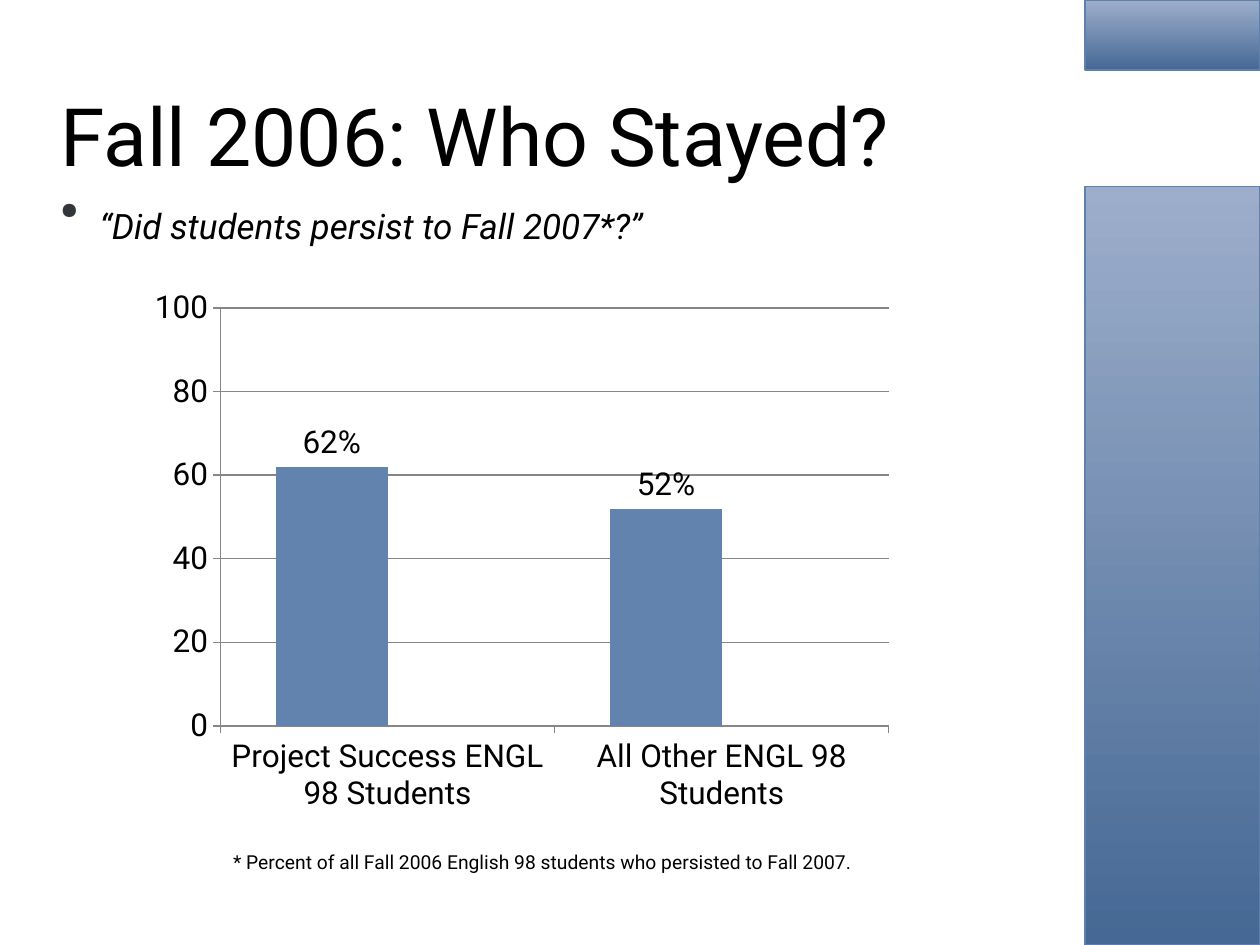
from lxml import etree
from pptx import Presentation
from pptx.chart.data import CategoryChartData
from pptx.dml.color import RGBColor
from pptx.enum import chart as charts, shapes, text
from pptx.oxml import parse_xml
from pptx.oxml.ns import nsdecls, qn
from pptx.util import Cm, Pt

FONT = "Roboto"
BLACK = "000000"
AXIS_GREY = "868686"


def color(hex_value):
    return RGBColor.from_string(hex_value)


def set_font(font, size, italic=False):
    font.name = FONT
    font.size = Pt(size)
    font.italic = italic
    font.color.rgb = color(BLACK)


def add_text(slide, content, box, size, italic=False, anchor=text.MSO_ANCHOR.TOP,
             grow=False):
    """Add a wrapped text box and return its paragraph."""
    frame = slide.shapes.add_textbox(*map(Cm, box)).text_frame
    frame.word_wrap = True
    frame.vertical_anchor = anchor
    if grow:
        frame.auto_size = text.MSO_AUTO_SIZE.SHAPE_TO_FIT_TEXT
    paragraph = frame.paragraphs[0]
    run = paragraph.add_run()
    run.text = content
    set_font(run.font, size, italic)
    return paragraph


def add_bullet(paragraph, hex_value, indent):
    props = paragraph._p.get_or_add_pPr()
    props.set("marL", str(Cm(indent)))
    props.set("indent", str(-Cm(indent)))
    bullet_color = etree.SubElement(props, qn("a:buClr"))
    etree.SubElement(bullet_color, qn("a:srgbClr")).set("val", hex_value)
    etree.SubElement(props, qn("a:buSzPct")).set("val", "65000")
    etree.SubElement(props, qn("a:buChar")).set("char", "●")


def add_side_panel(slide, top, height):
    panel = slide.shapes.add_shape(shapes.MSO_SHAPE.RECTANGLE, Cm(21.87), Cm(top),
                                   Cm(3.53), Cm(height))
    panel.shadow.inherit = False
    panel.fill.gradient()
    panel.fill.gradient_angle = 90
    for stop, hex_value, position in zip(panel.fill.gradient_stops,
                                         ("456894", "9DAECB"), (0, 1)):
        stop.color.rgb = color(hex_value)
        stop.position = position
    panel.line.color.rgb = color("5E80AB")
    panel.line.width = Pt(1)


def style_axis(axis):
    axis.major_tick_mark = charts.XL_TICK_MARK.OUTSIDE
    axis.minor_tick_mark = charts.XL_TICK_MARK.NONE
    axis.format.line.color.rgb = color(AXIS_GREY)
    set_font(axis.tick_labels.font, 18)


def set_plot_area(chart, **fractions):
    """Fix the inner plot area as fractions of the chart frame."""
    values = "".join(f'<c:{key} val="{value}"/>' for key, value in fractions.items())
    layout = parse_xml(
        f'<c:layout {nsdecls("c")}><c:manualLayout><c:layoutTarget val="inner"/>'
        f'<c:xMode val="edge"/><c:yMode val="edge"/>{values}'
        '</c:manualLayout></c:layout>')
    plot_area = chart._chartSpace.chart.plotArea
    for existing in plot_area.findall(qn("c:layout")):
        plot_area.remove(existing)
    plot_area.insert(0, layout)


def add_persistence_chart(slide):
    data = CategoryChartData()
    data.categories = ["Project Success ENGL 98 Students", "All Other ENGL 98 Students"]
    data.add_series("Series 1", (62, 52))
    data.add_series("Series 2", (None, None))
    chart = slide.shapes.add_chart(charts.XL_CHART_TYPE.COLUMN_CLUSTERED, Cm(2.74),
                                   Cm(5.66), Cm(15.49), Cm(10.95), data).chart
    chart.has_legend = False
    chart.has_title = False
    set_font(chart.font, 18)
    set_plot_area(chart, x=0.11, y=0.05, w=0.87, h=0.77)

    style_axis(chart.category_axis)
    percent_axis = chart.value_axis
    style_axis(percent_axis)
    percent_axis.minimum_scale = 0
    percent_axis.maximum_scale = 100
    percent_axis.major_unit = 20
    percent_axis.has_major_gridlines = True
    percent_axis.major_gridlines.format.line.color.rgb = color(AXIS_GREY)
    percent_axis.tick_labels.number_format = "0"
    percent_axis.tick_labels.number_format_is_linked = False

    plot = chart.plots[0]
    plot.gap_width = 100
    plot.overlap = 0
    plot.vary_by_categories = False
    for series, hex_value in zip(plot.series, ("6283AD", "324966")):
        series.format.fill.solid()
        series.format.fill.fore_color.rgb = color(hex_value)
        series.invert_if_negative = False
        labels = series.data_labels
        labels.show_value = True
        labels.number_format = '0"%"'
        labels.number_format_is_linked = False
        labels.position = charts.XL_LABEL_POSITION.OUTSIDE_END
        set_font(labels.font, 18)


def main():
    deck = Presentation()
    deck.slide_width, deck.slide_height = Cm(25.4), Cm(19.05)
    slide = deck.slides.add_slide(deck.slide_layouts[6])

    add_text(slide, "Fall 2006: Who Stayed?", (0.97, 1.35, 19.69, 2.72), 46,
             anchor=text.MSO_ANCHOR.MIDDLE)
    question = add_text(slide, "“Did students persist to Fall 2007*?”",
                        (0.97, 3.3, 19.69, 13.72), 20, italic=True)
    add_bullet(question, "32363B", 0.79)
    tall_space = question.add_run()
    tall_space.text = " "
    set_font(tall_space.font, 40, italic=True)

    for top, height in ((3.76, 15.29), (0, 1.42)):
        add_side_panel(slide, top, height)
    add_persistence_chart(slide)
    add_text(slide, "* Percent of all Fall 2006 English 98 students who persisted to Fall 2007.",
             (4.45, 17.02, 14.22, 0.74), 11, grow=True)
    deck.save("out.pptx")


if __name__ == "__main__":
    main()
